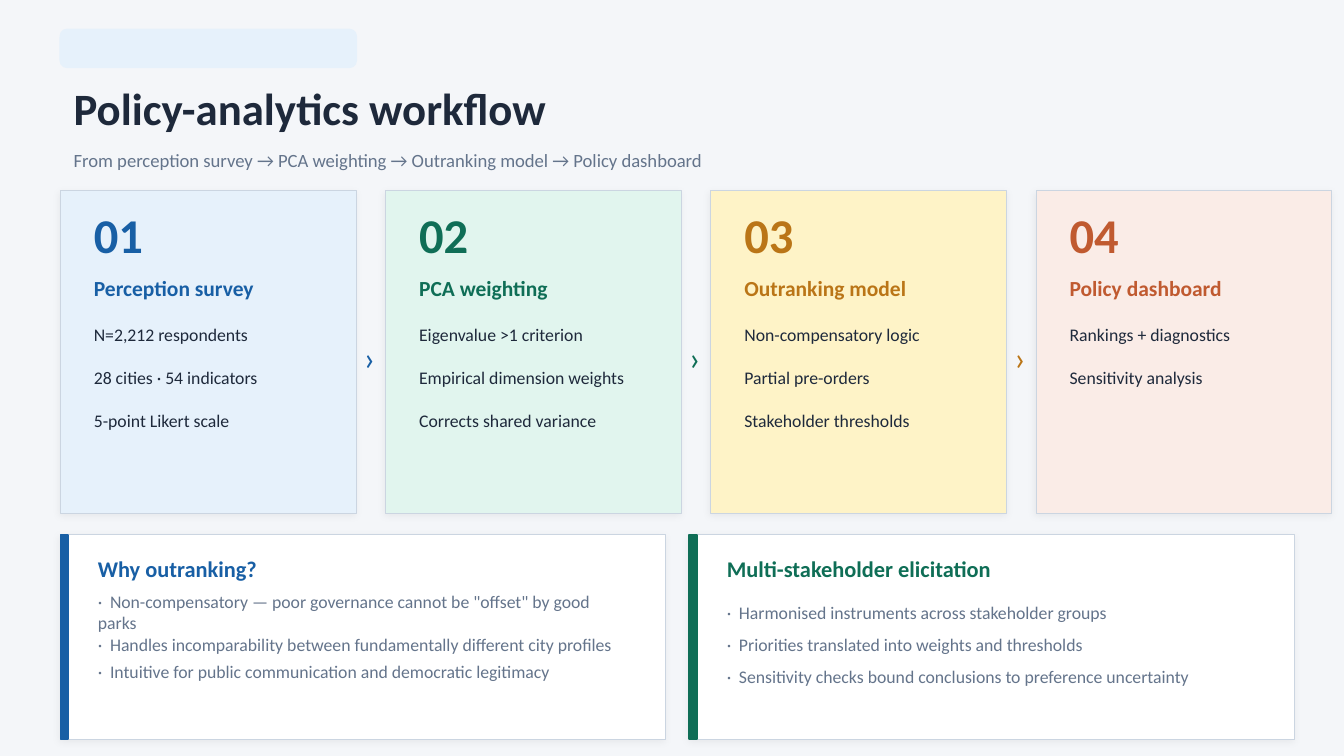
from lxml.etree import SubElement
from pptx import Presentation
from pptx.dml.color import RGBColor
from pptx.enum.shapes import MSO_SHAPE
from pptx.enum.text import MSO_ANCHOR, PP_ALIGN
from pptx.oxml.ns import qn
from pptx.util import Inches, Pt

INK, MUTED, BORDER = "1E293B", "64748B", "CBD5E1"
BLUE, GREEN, AMBER, RUST = "185FA5", "0F6E56", "BA7517", "C05A30"
PALE_BLUE = "E6F1FB"
LEFT = 0.45

STEPS = [
    ("Perception survey", BLUE, PALE_BLUE,
     ["N=2,212 respondents", "28 cities · 54 indicators", "5-point Likert scale"]),
    ("PCA weighting", GREEN, "E1F5EE",
     ["Eigenvalue >1 criterion", "Empirical dimension weights", "Corrects shared variance"]),
    ("Outranking model", AMBER, "FEF3C7",
     ["Non-compensatory logic", "Partial pre-orders", "Stakeholder thresholds"]),
    ("Policy dashboard", RUST, "FAECE7",
     ["Rankings + diagnostics", "Sensitivity analysis"]),
]

PANELS = [
    ("Why outranking?", BLUE, [
        (4.44, 'Non-compensatory — poor governance cannot be "offset" by good parks'),
        (4.68, "Handles incomparability between fundamentally different city profiles"),
        (4.88, "Intuitive for public communication and democratic legitimacy")]),
    ("Multi-stakeholder elicitation", GREEN, [
        (4.44, "Harmonised instruments across stakeholder groups"),
        (4.68, "Priorities translated into weights and thresholds"),
        (4.92, "Sensitivity checks bound conclusions to preference uncertainty")]),
]


def color(value):
    """Turn a hex string into a colour."""
    return RGBColor.from_string(value)


def add_block(slide, box, fill, line, line_width=1, kind=MSO_SHAPE.RECTANGLE):
    """Add a filled, outlined shape without a shadow."""
    shape = slide.shapes.add_shape(kind, *map(Inches, box))
    shape.shadow.inherit = False
    shape.fill.solid()
    shape.fill.fore_color.rgb = color(fill)
    shape.line.color.rgb = color(line)
    shape.line.width = Pt(line_width)
    return shape


def add_card(slide, box, fill):
    """Add a thinly outlined card with a faint soft shadow."""
    card = add_block(slide, box, fill, BORDER, 0.5)
    effects = card._element.spPr.find(qn("a:effectLst"))
    shadow = SubElement(effects, qn("a:outerShdw"), blurRad=str(Pt(4)), dist=str(Pt(1)),
                        dir=str(135 * 60000), algn="bl", rotWithShape="0")
    tint = SubElement(shadow, qn("a:srgbClr"), val="000000")
    SubElement(tint, qn("a:alpha"), val="6000")


def add_text(slide, box, text, size, ink, bold=False, align=PP_ALIGN.LEFT, tab=None):
    """Add one vertically centred paragraph, with a tab stop if given."""
    frame = slide.shapes.add_textbox(*map(Inches, box)).text_frame
    frame.word_wrap = True
    frame.vertical_anchor = MSO_ANCHOR.MIDDLE
    paragraph = frame.paragraphs[0]
    paragraph.alignment = align
    if tab:
        stops = SubElement(paragraph._p.get_or_add_pPr(), qn("a:tabLst"))
        SubElement(stops, qn("a:tab"), pos=str(Inches(tab)), algn="l")
    run = paragraph.add_run()
    run.text = text
    formats = {"name": "Calibri", "size": Pt(size), "bold": bold}
    for name, value in formats.items():
        setattr(run.font, name, value)
    run.font.color.rgb = color(ink)


def add_header(slide):
    """Add the empty tag, the title and the subtitle."""
    tag = add_block(slide, (LEFT, 0.22, 2.2, 0.28), PALE_BLUE, PALE_BLUE,
                    kind=MSO_SHAPE.ROUNDED_RECTANGLE)
    tag.adjustments[0] = 0.18
    add_text(slide, (LEFT, 0.55, 9.1, 0.5), "Policy-analytics workflow", 24, INK, bold=True)
    add_text(slide, (LEFT, 1.05, 9.1, 0.28),
             "From perception survey → PCA weighting → Outranking model → Policy dashboard",
             10, MUTED)


def add_step(slide, index, title, accent, fill, details):
    """Add a numbered step card, followed by a chevron unless it is the last."""
    left = LEFT + index * 2.42
    text_left = left + 0.15
    add_card(slide, (left, 1.42, 2.2, 2.4), fill)
    add_text(slide, (text_left, 1.52, 0.65, 0.45), f"{index + 1:02}", 26, accent, bold=True)
    add_text(slide, (text_left, 1.98, 1.95, 0.32), title, 11.5, accent, bold=True)
    for row, detail in enumerate(details):
        add_text(slide, (text_left, 2.34 + row * 0.32, 1.95, 0.3), detail, 9.5, INK)
    if index < len(STEPS) - 1:
        add_text(slide, (left + 2.16, 2.51, 0.24, 0.3), "›", 18, accent, align=PP_ALIGN.CENTER)


def add_panel(slide, index, title, accent, points):
    """Add a white panel with an accent bar, a heading and dotted points."""
    left = LEFT + index * 4.68
    text_left = left + 0.18
    add_card(slide, (left, 3.98, 4.5, 1.52), "FFFFFF")
    add_block(slide, (left, 3.98, 0.06, 1.52), accent, accent)
    add_text(slide, (text_left, 4.08, 4.2, 0.3), title, 12, accent, bold=True)
    for top, point in points:
        add_text(slide, (text_left, top, 4.15, 0.23), f"·\t{point}", 9.5, MUTED, tab=0.09)


def main():
    """Build and save the workflow slide."""
    presentation = Presentation()
    presentation.slide_width = Inches(10)
    presentation.slide_height = Inches(10 * 9 / 16)
    slide = presentation.slides.add_slide(presentation.slide_layouts[6])
    slide.background.fill.solid()
    slide.background.fill.fore_color.rgb = color("F4F6F9")
    add_header(slide)
    for index, step in enumerate(STEPS):
        add_step(slide, index, *step)
    for index, panel in enumerate(PANELS):
        add_panel(slide, index, *panel)
    presentation.save("out.pptx")


if __name__ == "__main__":
    main()
